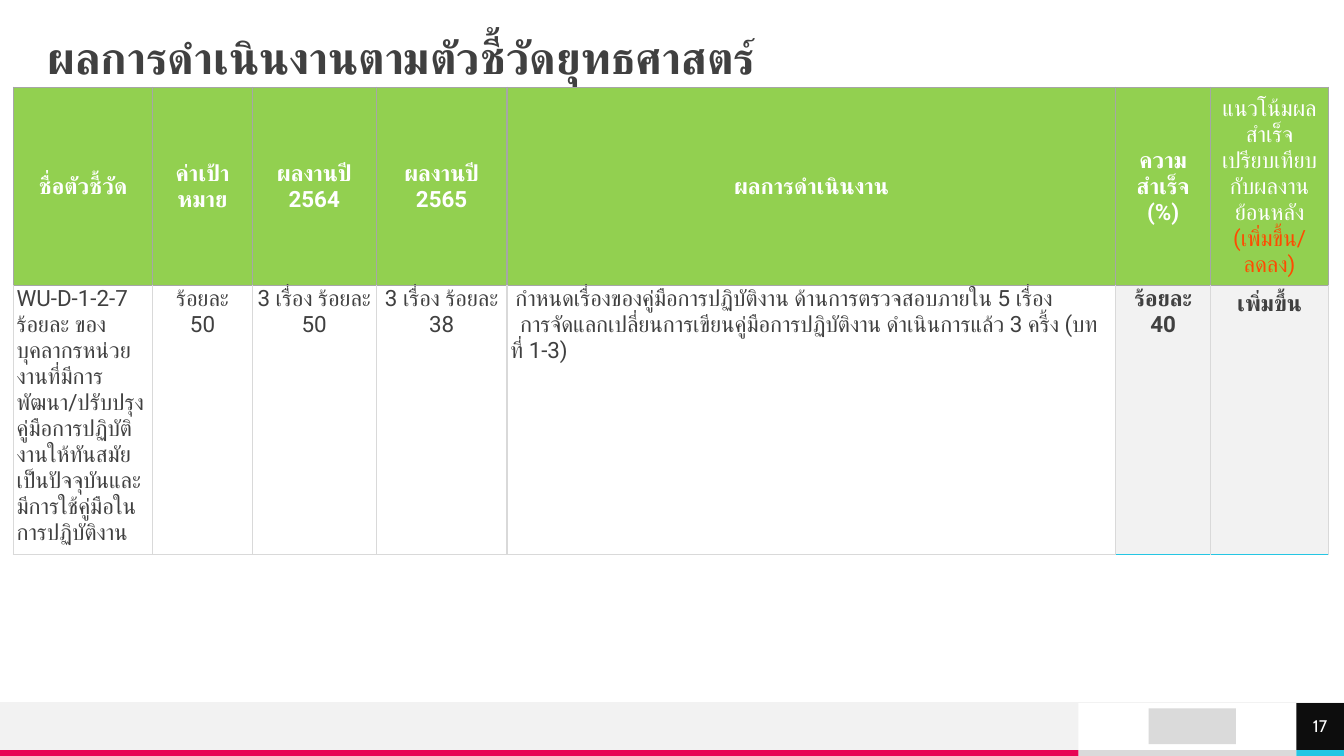
import pptx
import pptx.util
import pptx.dml.color
import pptx.enum.shapes
import pptx.enum.text
import pptx.oxml
import pptx.oxml.ns
from lxml import etree

Cm = pptx.util.Cm
Pt = pptx.util.Pt
RGB = pptx.dml.color.RGBColor.from_string
ALIGN = pptx.enum.text.PP_ALIGN
ANCHOR = pptx.enum.text.MSO_ANCHOR

THEME = {
    "heading": "Roboto", "accent": "Cabin",
    "title": Pt(32), "body": Pt(16), "small": Pt(12),
    "white": "FFFFFF", "dark": "404040", "black": "0D0D0D", "pale": "F2F2F2",
    "silver": "DADADA", "cell_line": "D9D9D9", "header_line": "A6A6A6",
    "green": "92D050", "cyan": "25C6E3", "pink": "E80554", "orange": "FF4A01",
}


def style(span, face, size, color, bold=False):
    span.font.name = THEME[face]
    span.font.size = THEME[size]
    span.font.color.rgb = RGB(THEME[color])
    span.font.bold = bold
    etree.SubElement(span.font._element, pptx.oxml.ns.qn("a:cs"), typeface=THEME[face])


def paint_cell(cell, fill, left, top, right, bottom):
    properties = cell._tc.get_or_add_tcPr()
    for side, color in zip("LTRB", (left, top, right, bottom)):
        line = etree.SubElement(properties, pptx.oxml.ns.qn(f"a:ln{side}"), w=str(Pt(1)))
        solid = etree.SubElement(line, pptx.oxml.ns.qn("a:solidFill"))
        etree.SubElement(solid, pptx.oxml.ns.qn("a:srgbClr"), val=THEME[color])
    cell.fill.solid()
    cell.fill.fore_color.rgb = RGB(THEME[fill])


deck = pptx.Presentation()
deck.slide_width, deck.slide_height = Cm(33.87), Cm(19.05)
page = deck.slides.add_slide(deck.slide_layouts[5])

title = page.shapes.title
title.left, title.top, title.width, title.height = Cm(1.19), Cm(0.91), Cm(31.47), Cm(1.19)
frame = title.text_frame
frame.text = "ผลการดำเนินงานตามตัวชี้วัดยุทธศาสตร์"
frame.auto_size = pptx.enum.text.MSO_AUTO_SIZE.NONE
frame.vertical_anchor = ANCHOR.MIDDLE
frame.margin_left = frame.margin_top = frame.margin_right = frame.margin_bottom = 0
frame.paragraphs[0].alignment = ALIGN.LEFT
frame.paragraphs[0].line_spacing = 0.9
style(frame.paragraphs[0].runs[0], "heading", "title", "dark", True)

footer_blocks = [
    (27.18, 18.9, 5.49, 0.15, "silver"),
    (0, 17.7, 27.18, 1.2, "pale"),
    (0, 18.9, 27.18, 0.15, "pink"),
    (32.67, 18.9, 1.2, 0.15, "cyan"),
    (28.95, 17.85, 2.2, 0.9, "silver"),
    (32.67, 17.7, 1.2, 1.2, "black"),
]
for left, top, width, height, color in footer_blocks:
    block = page.shapes.add_shape(
        pptx.enum.shapes.MSO_SHAPE.RECTANGLE, Cm(left), Cm(top), Cm(width), Cm(height))
    block.shadow.inherit = False
    block.fill.solid()
    block.fill.fore_color.rgb = RGB(THEME[color])
    block.line.fill.background()

frame = block.text_frame
frame.text = "17"
frame.vertical_anchor = ANCHOR.MIDDLE
frame.margin_left = frame.margin_top = frame.margin_right = frame.margin_bottom = 0
frame.paragraphs[0].alignment = ALIGN.CENTER
style(frame.paragraphs[0].runs[0], "accent", "small", "white")

rule = page.shapes.add_connector(
    pptx.enum.shapes.MSO_CONNECTOR.STRAIGHT, Cm(33.87), Cm(17.7), Cm(0), Cm(17.7))
rule.line.color.rgb = RGB(THEME["pale"])
rule.line.width = Pt(0.5)
etree.SubElement(rule._element.spPr, pptx.oxml.ns.qn("a:effectLst"))

headers = [
    "ชื่อตัวชี้วัด", "ค่าเป้าหมาย", "ผลงานปี 2564", "ผลงานปี 2565", "ผลการดำเนินงาน",
    "ความ\nสำเร็จ\n(%)",
    "แนวโน้มผลสำเร็จเปรียบเทียบกับผลงานย้อนหลัง\n(เพิ่มขึ้น/ลดลง)",
]
results = [
    "WU-D-1-2-7\nร้อยละ ของบุคลากรหน่วยงานที่มีการพัฒนา/ปรับปรุงคู่มือการปฏิบัติงานให้ทันสมัยเป็นปัจจุบันและมีการใช้คู่มือในการปฏิบัติงาน",
    "ร้อยละ\n50", "3 เรื่อง ร้อยละ 50", "3 เรื่อง ร้อยละ 38",
    "กำหนดเรื่องของคู่มือการปฏิบัติงาน ด้านการตรวจสอบภายใน 5 เรื่อง\n"
    "การจัดแลกเปลี่ยนการเขียนคู่มือการปฏิบัติงาน ดำเนินการแล้ว 3 ครี้ง (บทที่ 1-3)",
    "ร้อยละ\n40", "เพิ่มขึ้น",
]
widths = [3.51, 2.51, 3.12, 3.3, 15.34, 2.39, 2.97]
heights = [5, 6.78]
table_frame = page.shapes.add_table(
    2, len(widths), Cm(0.34), Cm(2.2), Cm(sum(widths)), Cm(sum(heights)))
table = table_frame.table
table.horz_banding = False
table.first_row = False
for row, height in zip(table.rows, heights):
    row.height = Cm(height)

for index, width in enumerate(widths):
    table.columns[index].width = Cm(width)
    trend = index == 6
    summary = index >= 5

    header = table.cell(0, index)
    paint_cell(header, "green", *["header_line"] * 4)
    header.vertical_anchor = ANCHOR.MIDDLE
    para = header.text_frame.paragraphs[0]
    para.text = headers[index]
    para.alignment = ALIGN.CENTER
    for position, span in enumerate(para.runs):
        style(span, "heading", "body", "orange" if trend and position else "white", not trend)

    result = table.cell(1, index)
    paint_cell(result, "pale" if summary else "white", "cell_line", "header_line",
               "cell_line", "cyan" if summary else "cell_line")
    if not trend:
        result.margin_left = result.margin_right = Cm(0.08)
        result.margin_top = result.margin_bottom = 0
    result.text_frame.text = results[index]
    for para in result.text_frame.paragraphs:
        para.alignment = ALIGN.LEFT if index in (0, 4) else ALIGN.CENTER
        style(para.runs[0], "heading", "body", "dark", summary)

activities = table.cell(1, 4)
activities.margin_right = Cm(0.25)
for para, indent in zip(activities.text_frame.paragraphs, (0.13, 0.25)):
    para._p.get_or_add_pPr().set("indent", str(Cm(indent)))

deck.save("out.pptx")
